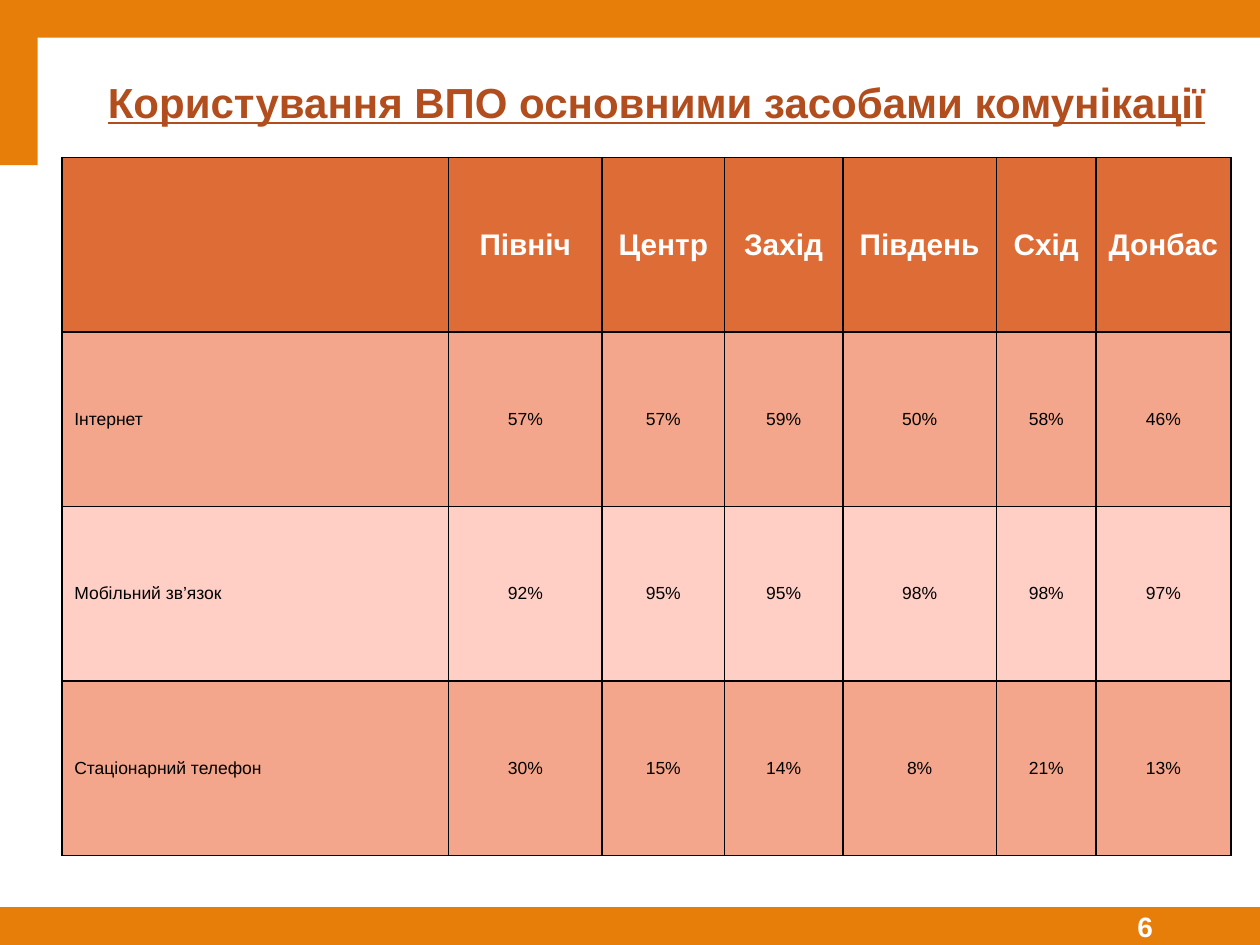
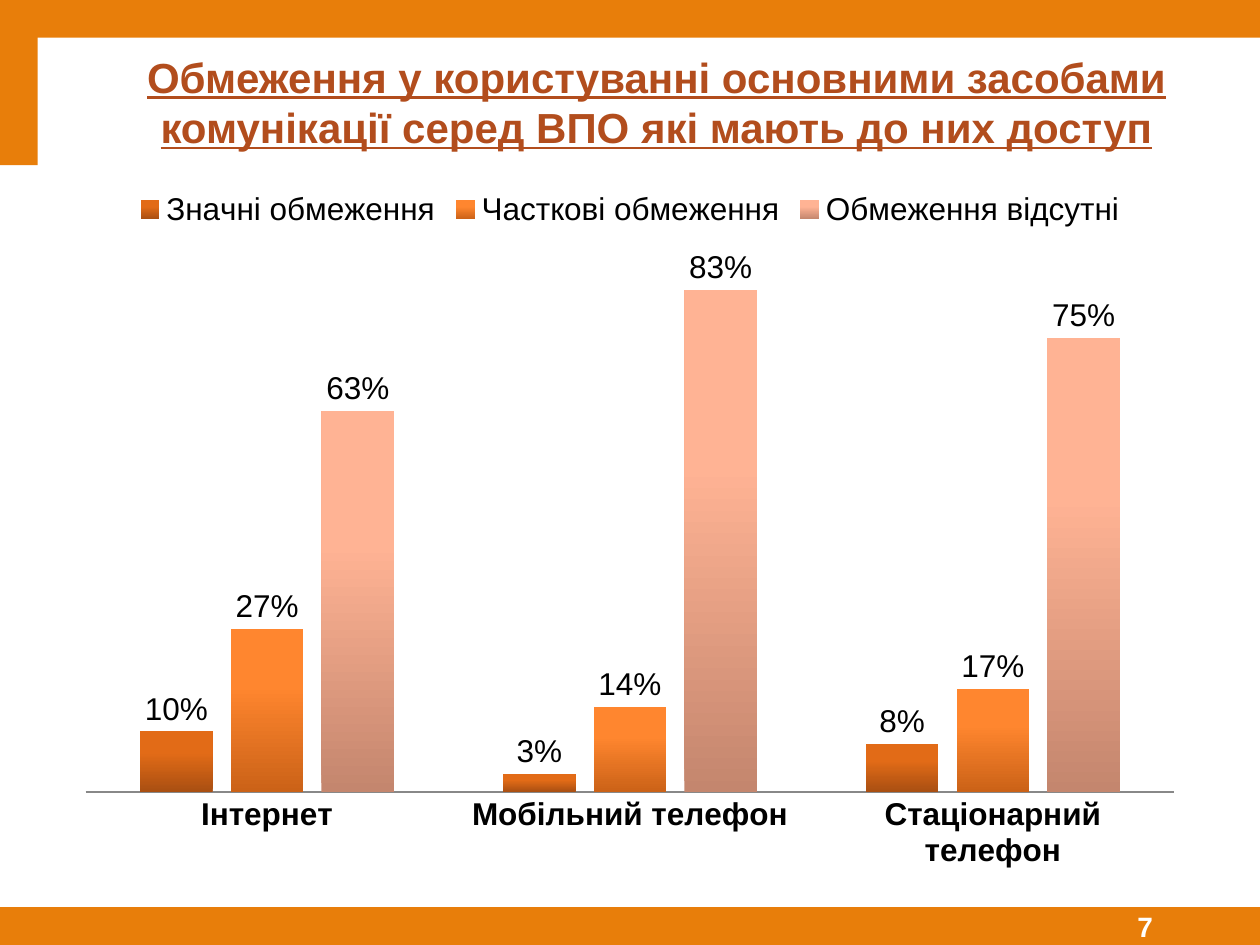
import pptx
import pptx.util
import pptx.dml.color
import pptx.chart.data
import pptx.enum.chart
import pptx.enum.shapes
import pptx.enum.text
import pptx.oxml
import pptx.oxml.ns
from lxml import etree

Inches, Pt = pptx.util.Inches, pptx.util.Pt
ALIGN = pptx.enum.text.PP_ALIGN
MIDDLE = pptx.enum.text.MSO_ANCHOR.MIDDLE

FONT = "Arial"
ORANGE, RUST, WHITE, BLACK = "E87E0A", "B24D1D", "FFFFFF", "000000"
HEADER_FILL, BAND_FILLS = "DE6C36", ("F3A68B", "FFCFC6")

BANDS = [(0, 7.2, 1.83, 0.3), (1.71, 7.2, 6.56, 0.3), (0, 0, 10, 0.3), (0, 0.29, 0.3, 1.02)]
NUMBER_BOX = (8.18, 7.2, 1.82, 0.3)
TITLE_BOX = (0.3, 0.3, 9.7, 1.01)

USAGE_TITLE = "Користування ВПО основними засобами комунікації"
USAGE_ROWS = [
    ("", "Північ", "Центр", "Захід", "Південь", "Схід", "Донбас"),
    ("Інтернет", "57%", "57%", "59%", "50%", "58%", "46%"),
    ("Мобільний зв’язок", "92%", "95%", "95%", "98%", "98%", "97%"),
    ("Стаціонарний телефон", "30%", "15%", "14%", "8%", "21%", "13%"),
]
USAGE_COLUMNS = (3.07, 1.22, 0.97, 0.94, 1.22, 0.79, 1.07)
USAGE_BOX = (0.49, 1.25, sum(USAGE_COLUMNS), 5.54)

LIMITS_TITLE = "Обмеження у користуванні основними засобами комунікації серед ВПО які мають до них доступ"
LIMITS_BOX = (0.5, 1.4, 9, 5.6)
LIMITS_CATEGORIES = ("Інтернет", "Мобільний телефон", "Стаціонарний телефон")
LIMITS_SERIES = [
    ("Значні обмеження", (0.10, 0.03, 0.08), ("A94F12", "E26B17")),
    ("Часткові обмеження", (0.27, 0.14, 0.17), ("CB6217", "FF862F")),
    ("Обмеження відсутні", (0.63, 0.83, 0.75), ("C4866E", "FFB394")),
]


def rgb(color):
    return pptx.dml.color.RGBColor.from_string(color)


def place(box):
    return [Inches(v) for v in box]


def style(font, size, color, bold=False):
    font.name, font.size, font.bold = FONT, Pt(size), bold
    font.color.rgb = rgb(color)


def paint(target, color):
    target.fill.solid()
    target.fill.fore_color.rgb = rgb(color)


def add_band(s, box):
    sp = s.shapes.add_shape(pptx.enum.shapes.MSO_SHAPE.RECTANGLE, *place(box))
    sp.shadow.inherit = False
    paint(sp, ORANGE)
    sp.line.fill.background()
    return sp


def add_slide(prs, title, number):
    s = prs.slides.add_slide(prs.slide_layouts[6])
    for box in BANDS:
        add_band(s, box)
    tf = s.shapes.add_textbox(*place(TITLE_BOX)).text_frame
    tf.word_wrap = True
    tf.vertical_anchor = MIDDLE
    tf.margin_left = Inches(0.22)
    p = tf.paragraphs[0]
    p.text, p.alignment = title, ALIGN.CENTER
    style(p.font, 24, RUST, True)
    p.font.underline = True

    tf = add_band(s, NUMBER_BOX).text_frame
    tf.vertical_anchor = MIDDLE
    tf.margin_top = tf.margin_bottom = 0
    tf.margin_right = Inches(0.85)
    p = tf.paragraphs[0]
    p.text, p.alignment = str(number), ALIGN.RIGHT
    style(p.font, 16, WHITE, True)
    return s


def border(cell):
    tcPr = cell._tc.get_or_add_tcPr()
    for i, side in enumerate(("lnL", "lnR", "lnT", "lnB")):
        ln = pptx.oxml.parse_xml(
            f'<a:{side} {pptx.oxml.ns.nsdecls("a")} w="{Pt(1)}">'
            f'<a:solidFill><a:srgbClr val="{BLACK}"/></a:solidFill></a:{side}>')
        tcPr.insert(i, ln)


def add_usage_table(s):
    table = s.shapes.add_table(len(USAGE_ROWS), len(USAGE_COLUMNS), *place(USAGE_BOX)).table
    for column, width in zip(table.columns, USAGE_COLUMNS):
        column.width = Inches(width)
    for i, row in enumerate(USAGE_ROWS):
        table.rows[i].height = Inches(USAGE_BOX[3] / len(USAGE_ROWS))
        for j, text in enumerate(row):
            cell = table.cell(i, j)
            cell.vertical_anchor = MIDDLE
            paint(cell, BAND_FILLS[(i - 1) % 2] if i else HEADER_FILL)
            border(cell)
            p = cell.text_frame.paragraphs[0]
            p.text = text
            p.alignment = ALIGN.CENTER if j else ALIGN.LEFT
            if i:
                style(p.font, 10, BLACK)
            else:
                cell.margin_left = cell.margin_right = Inches(0.05)
                style(p.font, 17, WHITE, True)


def add_limits_chart(s):
    data = pptx.chart.data.CategoryChartData(number_format="0%")
    data.categories = LIMITS_CATEGORIES
    for name, values, _ in LIMITS_SERIES:
        data.add_series(name, values)
    chart = s.shapes.add_chart(
        pptx.enum.chart.XL_CHART_TYPE.COLUMN_CLUSTERED, *place(LIMITS_BOX), data).chart
    style(chart.font, 18, BLACK)
    chart.has_title = False
    chart.has_legend = True
    chart.legend.position = pptx.enum.chart.XL_LEGEND_POSITION.TOP
    chart.legend.include_in_layout = False

    axis = chart.category_axis
    axis.major_tick_mark = pptx.enum.chart.XL_TICK_MARK.NONE
    axis.format.line.color.rgb = rgb("888888")
    style(axis.tick_labels.font, 18, BLACK, True)
    axis = chart.value_axis
    axis.minimum_scale, axis.maximum_scale = 0, 0.9
    axis.has_major_gridlines = False
    axis.visible = False

    plot = chart.plots[0]
    plot.gap_width, plot.overlap = 150, -25
    plot.vary_by_categories = False
    for series, (_, _, colors) in zip(plot.series, LIMITS_SERIES):
        fill = series.format.fill
        fill.gradient()
        fill.gradient_angle = 90
        for stop, color, position in zip(fill.gradient_stops, colors, (0, 0.65)):
            stop.color.rgb = rgb(color)
            stop.position = position
        labels = series.data_labels
        labels.show_value = True
        labels.number_format, labels.number_format_is_linked = "0%", False
        labels.position = pptx.enum.chart.XL_LABEL_POSITION.OUTSIDE_END


def main():
    prs = pptx.Presentation()
    prs.slide_width, prs.slide_height = Inches(10), Inches(7.5)
    add_usage_table(add_slide(prs, USAGE_TITLE, 6))
    add_limits_chart(add_slide(prs, LIMITS_TITLE, 7))
    prs.save("out.pptx")


if __name__ == "__main__":
    main()
